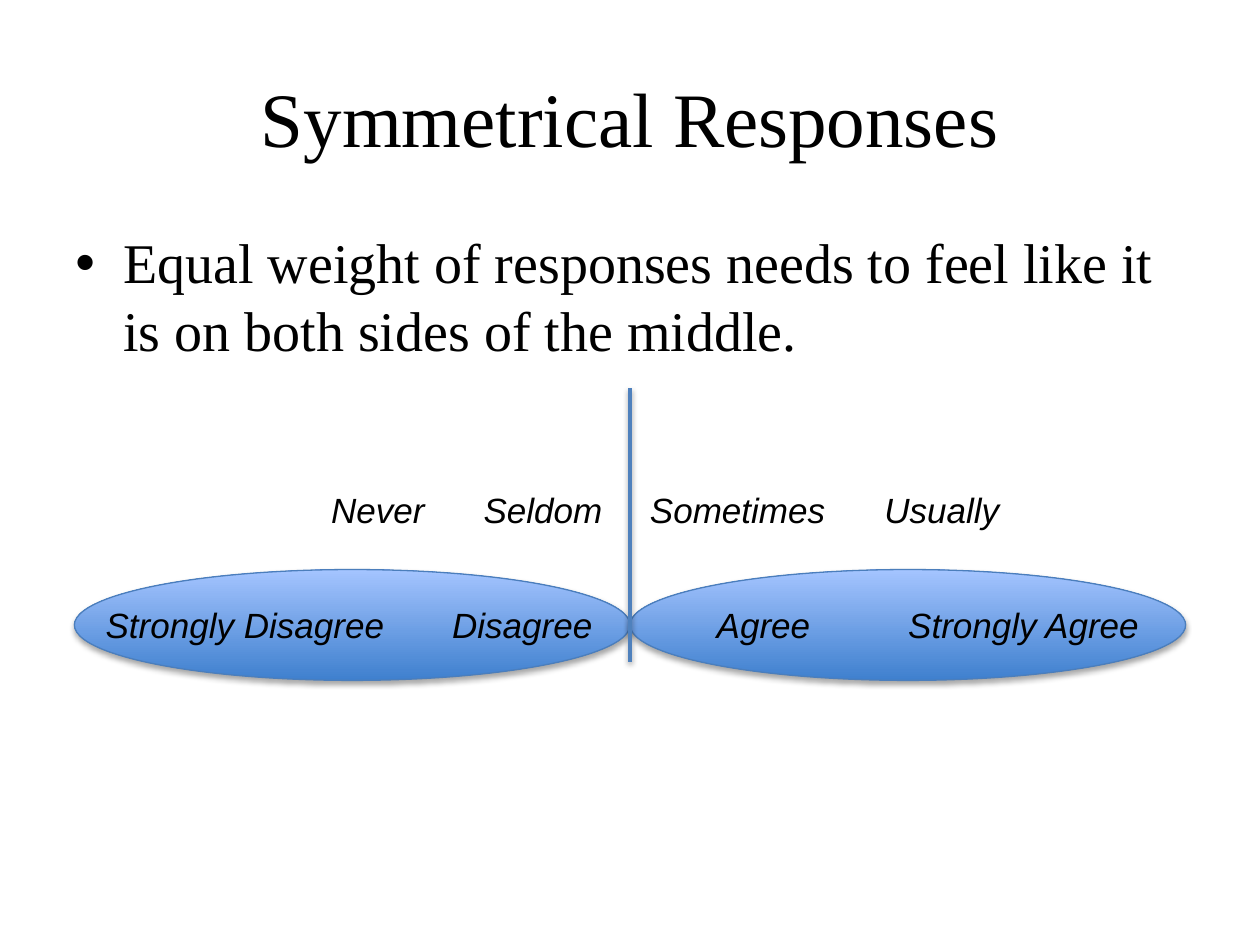
from lxml.etree import SubElement
from pptx import Presentation
from pptx.dml.color import RGBColor
from pptx.enum.shapes import MSO_CONNECTOR, MSO_SHAPE
from pptx.enum.text import MSO_ANCHOR, PP_ALIGN
from pptx.oxml.ns import qn
from pptx.util import Inches, Pt

# Content
TITLE = "Symmetrical Responses"
BULLET = "Equal weight of responses needs to feel like it is on both sides of the middle."
# Each scale: left, top, width of its box, then (label, distance from first label)
SCALES = [
    (0.74, 4.74, 8.54, [("Strongly Disagree", 0), ("Disagree", 2.75),
                        ("Agree", 4.85), ("Strongly Agree", 6.37)]),
    (2.53, 3.83, 5.62, [("Never", 0), ("Seldom", 1.21),
                        ("Sometimes", 2.53), ("Usually", 4.39)]),
]

# Layout and formats
MIDDLE = 5
OVAL_TOP, OVAL_WIDTH, OVAL_HEIGHT = 4.52, 4.41, 0.88
DIVIDER_TOP, DIVIDER_BOTTOM = 3.08, 5.25
GRADIENT = ["3F80CE", "A4C4FF"]
TITLE_FONT = {"name": "Times New Roman", "size": Pt(44)}
BODY_FONT = {"name": "Times New Roman", "size": Pt(32)}
LABEL_FONT = {"name": "Arial", "size": Pt(20), "italic": True}


def color(hex_value):
    return RGBColor.from_string(hex_value)


def write(paragraph, text, font_format):
    run = paragraph.add_run()
    run.text = text
    for name, value in font_format.items():
        setattr(run.font, name, value)
    run.font.color.rgb = color("000000")


def add_text_box(left, top, width, height):
    frame = slide.shapes.add_textbox(*map(Inches, (left, top, width, height))).text_frame
    frame.word_wrap = True
    return frame.paragraphs[0]


def style_line(shape, hex_value, width):
    shape.line.color.rgb = color(hex_value)
    shape.line.width = Pt(width)


def add_shadow(shape, opacity, distance):
    effects = SubElement(shape._element.spPr, qn("a:effectLst"))
    shadow = SubElement(effects, qn("a:outerShdw"), blurRad=str(Pt(3.1)),
                        dist=str(Pt(distance)), dir="5400000", rotWithShape="0")
    shade = SubElement(shadow, qn("a:srgbClr"), val="000000")
    SubElement(shade, qn("a:alpha"), val=str(opacity * 1000))


presentation = Presentation()
presentation.slide_width, presentation.slide_height = Inches(10), Inches(7.5)
slide = presentation.slides.add_slide(presentation.slide_layouts[5])

# Ovals on both sides of the middle
for left in (MIDDLE - OVAL_WIDTH, MIDDLE):
    oval = slide.shapes.add_shape(
        MSO_SHAPE.OVAL, *map(Inches, (left, OVAL_TOP, OVAL_WIDTH, OVAL_HEIGHT)))
    oval.fill.gradient()
    oval.fill.gradient_angle = 90
    for stop, hex_value in zip(oval.fill.gradient_stops, GRADIENT):
        stop.color.rgb = color(hex_value)
    for stop, position in zip(oval.fill.gradient_stops, (0, 1)):
        stop.position = position
    style_line(oval, "4B7EBC", 0.75)
    add_shadow(oval, 35, 1.8)

# Divider
divider = slide.shapes.add_connector(
    MSO_CONNECTOR.STRAIGHT, *map(Inches, (MIDDLE, DIVIDER_TOP, MIDDLE, DIVIDER_BOTTOM)))
style_line(divider, "4F81BD", 2)
add_shadow(divider, 38, 1.6)

# Title
title = slide.shapes.title
title.left, title.top, title.width, title.height = map(Inches, (0.5, 0.3, 9, 1.25))
title.text_frame.vertical_anchor = MSO_ANCHOR.MIDDLE
heading = title.text_frame.paragraphs[0]
heading.alignment = PP_ALIGN.CENTER
write(heading, TITLE, TITLE_FONT)

# Bullet
paragraph = add_text_box(0.5, 1.76, 9, 4.95)
paragraph.space_before = Pt(4)
properties = paragraph._p.get_or_add_pPr()
properties.set("marL", str(Inches(0.38)))
properties.set("indent", str(Inches(-0.38)))
SubElement(properties, qn("a:buFont"), typeface="Arial")
SubElement(properties, qn("a:buChar"), char="•")
write(paragraph, BULLET, BODY_FONT)

# Response scales, one tab stop per label after the first
for left, top, width, labels in SCALES:
    paragraph = add_text_box(left, top, width, 0.44)
    tabs = SubElement(paragraph._p.get_or_add_pPr(), qn("a:tabLst"))
    for _, distance in labels[1:]:
        SubElement(tabs, qn("a:tab"), pos=str(Inches(distance)), algn="l")
    write(paragraph, "\t".join(label for label, _ in labels), LABEL_FONT)

presentation.save("out.pptx")
